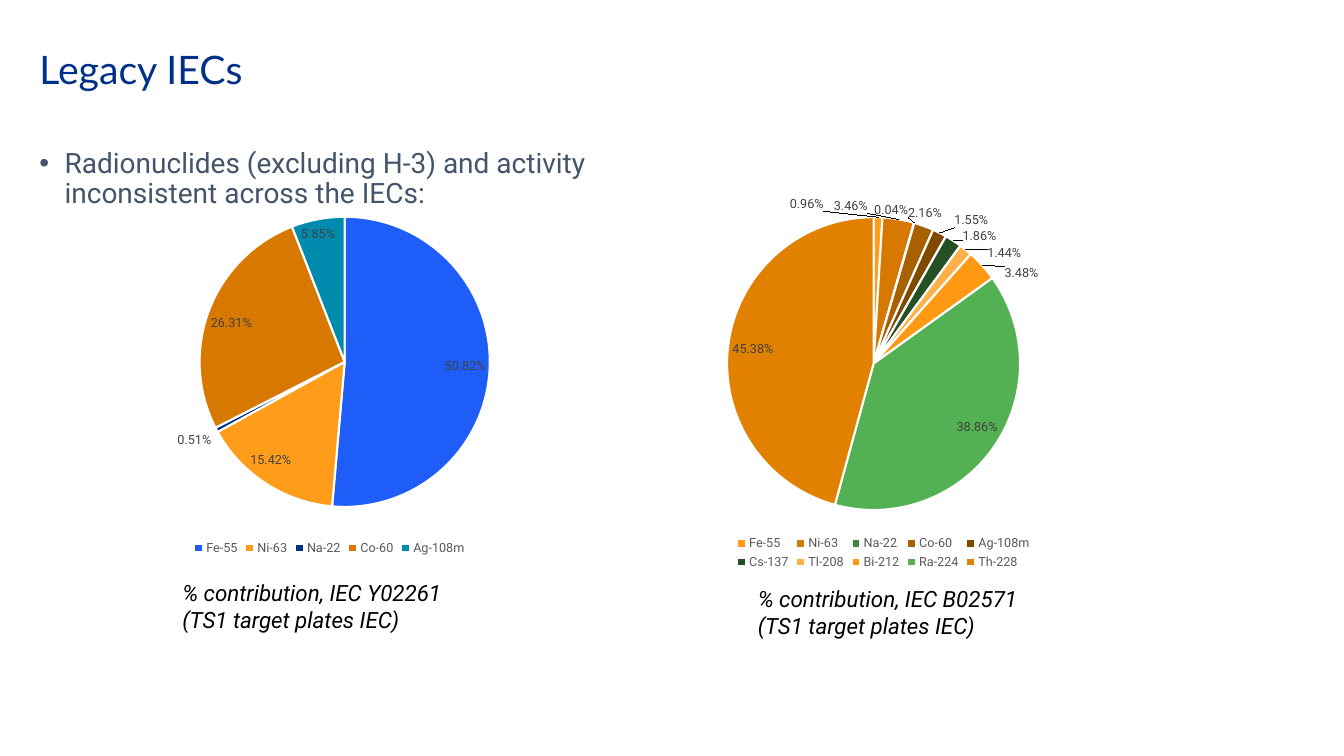
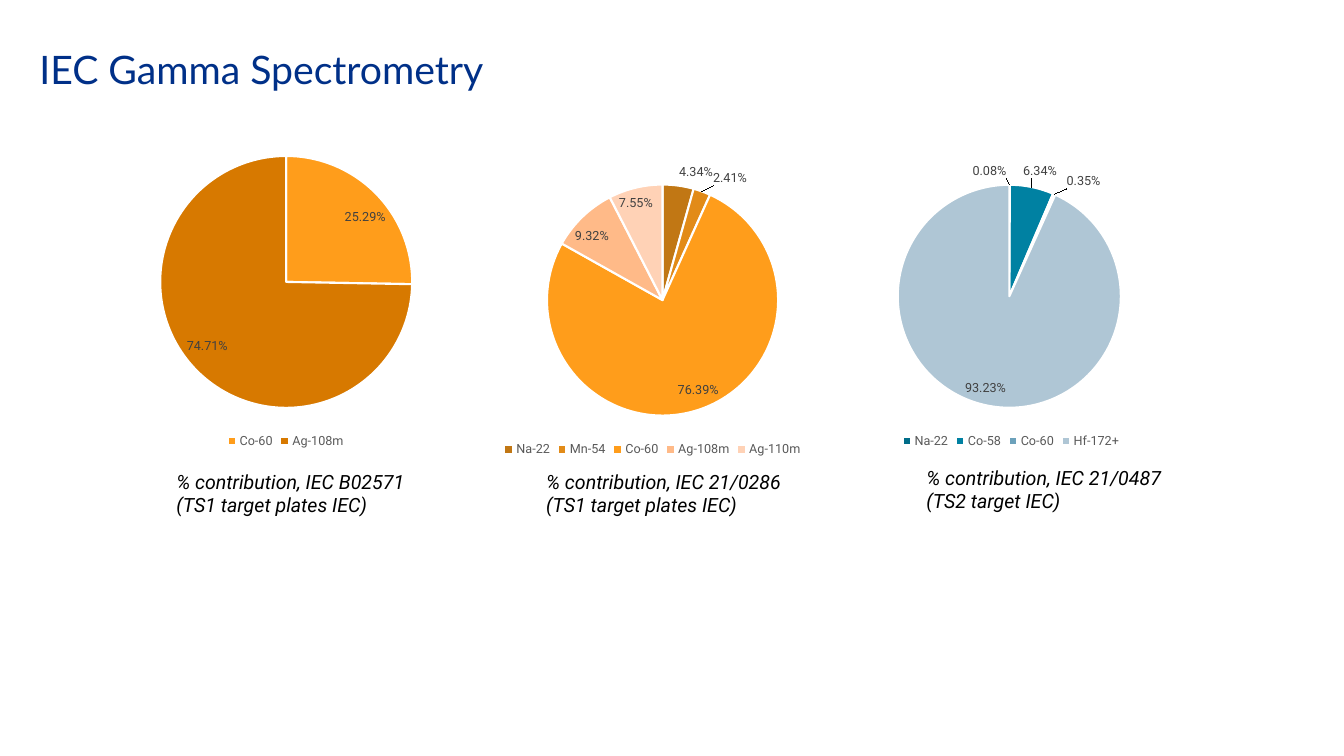
from dataclasses import dataclass, field
from typing import NamedTuple

from lxml import etree
from pptx import Presentation
from pptx import util as u
from pptx.chart.data import CategoryChartData
from pptx.dml.color import RGBColor
from pptx.enum import chart as ch
from pptx.enum import text as t
from pptx.oxml import ns

SLIDE_W, SLIDE_H = u.Inches(13.33), u.Inches(7.5)
NAVY = RGBColor(0x00, 0x30, 0x88)
SLATE = RGBColor(0x44, 0x54, 0x6A)
BLACK = RGBColor(0x00, 0x00, 0x00)
WHITE = RGBColor(0xFF, 0xFF, 0xFF)
LEGEND_GREY = RGBColor(0x59, 0x59, 0x59)
LABEL_GREY = RGBColor(0x40, 0x40, 0x40)
BLUE = RGBColor(0x1E, 0x5D, 0xF8)
ORANGE = RGBColor(0xFF, 0x9D, 0x1B)
OCHRE = RGBColor(0xD7, 0x79, 0x00)
TEAL = RGBColor(0x00, 0x8A, 0xAD)
PERCENT = "0.00%"


class Box(NamedTuple):
    """Left, top, width and height in percent of the slide."""
    left: float
    top: float
    width: float
    height: float

    def emu(self) -> tuple[int, int, int, int]:
        return (int(SLIDE_W * self.left / 100), int(SLIDE_H * self.top / 100),
                int(SLIDE_W * self.width / 100), int(SLIDE_H * self.height / 100))


class Disc(NamedTuple):
    """Centre in percent of the slide, diameter in percent of its width."""
    x: float
    y: float
    diameter: float


class Slice(NamedTuple):
    nuclide: str
    share: float
    color: RGBColor
    label_shift: tuple[float, float] | None = None


@dataclass
class Pie:
    frame: Box
    disc: Disc
    slices: list[Slice]
    caption: list[str]
    caption_box: Box
    caption_size: int


@dataclass
class Page:
    title: str
    pies: list[Pie]
    bullets: list[str] = field(default_factory=list)


TITLE_BOX = Box(2.18, 5.33, 47.85, 8.4)
BODY_BOX = Box(2.18, 19.07, 52.13, 63.47)
TS1 = "(TS1 target plates IEC)"

PAGES = [
    Page("Legacy IECs", [
        Pie(Box(0.9, 24.13, 47.25, 49.87), Disc(25.65, 47.87, 21.6), [
            Slice("Fe-55", 0.5082, BLUE),
            Slice("Ni-63", 0.1542, ORANGE),
            Slice("Na-22", 0.0051, NAVY),
            Slice("Co-60", 0.2631, OCHRE),
            Slice("Ag-108m", 0.0585, TEAL),
        ], ["% contribution, IEC Y02261", TS1], Box(12.83, 76, 21.83, 8.53), 16),
        Pie(Box(43.58, 24.13, 44.33, 51.73), Disc(65, 48.1, 21.8), [
            Slice("Fe-55", 0.0096, ORANGE, (-0.12, 0)),
            Slice("Ni-63", 0.0346, OCHRE, (-0.11, 0)),
            Slice("Na-22", 0.0004, RGBColor(0x3E, 0x86, 0x3E), (-0.07, 0)),
            Slice("Co-60", 0.0216, RGBColor(0xA9, 0x60, 0x00), (-0.03, 0)),
            Slice("Ag-108m", 0.0155, RGBColor(0x81, 0x49, 0x00), (0.02, 0)),
            Slice("Cs-137", 0.0186, RGBColor(0x25, 0x50, 0x25), (0.01, 0.02)),
            Slice("Tl-208", 0.0144, RGBColor(0xFF, 0xB1, 0x49), (0.03, 0.04)),
            Slice("Bi-212", 0.0348, RGBColor(0xFF, 0x98, 0x13), (0.03, 0.05)),
            Slice("Ra-224", 0.3886, RGBColor(0x53, 0xB0, 0x53)),
            Slice("Th-228", 0.4538, RGBColor(0xE2, 0x81, 0x00)),
        ], ["% contribution, IEC B02571", TS1], Box(55.65, 76.8, 23.48, 8.53), 16),
    ], ["Radionuclides (excluding H-3) and activity inconsistent across the IECs:"]),
    Page("IEC Gamma Spectrometry", [
        Pie(Box(31.8, 19.87, 33.53, 41.07), Disc(49.3, 39.7, 17.2), [
            Slice("Na-22", 0.0434, RGBColor(0xC1, 0x77, 0x14)),
            Slice("Mn-54", 0.0241, RGBColor(0xE2, 0x8B, 0x18), (0.02, 0)),
            Slice("Co-60", 0.7639, ORANGE),
            Slice("Ag-108m", 0.0932, RGBColor(0xFF, 0xBA, 0x88)),
            Slice("Ag-110m", 0.0755, RGBColor(0xFF, 0xD2, 0xB6)),
        ], ["% contribution, IEC 21/0286", TS1], Box(39.9, 61.47, 20.18, 7.6), 14),
        Pie(Box(2.18, 18.8, 38.18, 41.07), Disc(21.3, 37.3, 18.75), [
            Slice("Co-60", 0.2529, ORANGE),
            Slice("Ag-108m", 0.7471, OCHRE),
        ], ["% contribution, IEC B02571", TS1], Box(12.38, 61.47, 19.43, 7.6), 14),
        Pie(Box(56.48, 19.87, 37.5, 40), Disc(75.1, 39.2, 16.6), [
            Slice("Na-22", 0.0008, RGBColor(0x00, 0x6D, 0x89), (-0.04, 0)),
            Slice("Co-58", 0.0634, RGBColor(0x00, 0x81, 0xA2), (-0.02, -0.01)),
            Slice("Co-60", 0.0035, RGBColor(0x6C, 0xA1, 0xBB), (0.02, 0)),
            Slice("Hf-172+", 0.9323, RGBColor(0xAF, 0xC6, 0xD5)),
        ], ["% contribution, IEC 21/0487", "(TS2 target IEC)"],
            Box(68.18, 60.93, 20.18, 7.6), 14),
    ]),
]


def set_font(font, name: str, size: float, color: RGBColor, **extra) -> None:
    for key, value in {"name": name, "size": u.Pt(size), **extra}.items():
        setattr(font, key, value)
    font.color.rgb = color


def place(sp, box: Box) -> None:
    for key, value in zip(("left", "top", "width", "height"), box.emu()):
        setattr(sp, key, value)


def format_frame(tf, **values) -> None:
    for key, value in {"word_wrap": True, **values}.items():
        setattr(tf, key, value)


def add_title(s, title: str) -> None:
    sp = s.shapes.title
    place(sp, TITLE_BOX)
    format_frame(sp.text_frame, text=title, auto_size=t.MSO_AUTO_SIZE.NONE,
                 vertical_anchor=t.MSO_ANCHOR.MIDDLE)
    p = sp.text_frame.paragraphs[0]
    p.alignment, p.line_spacing = t.PP_ALIGN.LEFT, 0.9
    set_font(p.runs[0].font, "Lato", 28, NAVY)


def add_bullets(s, bullets: list[str]) -> None:
    sp = s.placeholders[1]
    place(sp, BODY_BOX)
    format_frame(sp.text_frame, text="\n".join(bullets),
                 auto_size=t.MSO_AUTO_SIZE.NONE, vertical_anchor=t.MSO_ANCHOR.TOP)
    for i, p in enumerate(sp.text_frame.paragraphs):
        p.line_spacing, p.space_before = 0.9, u.Pt(10 if i else 0)
        pPr = p._p.get_or_add_pPr()
        pPr.set("marL", str(u.Inches(0.25)))
        pPr.set("indent", str(-u.Inches(0.25)))
        etree.SubElement(pPr, ns.qn("a:buChar"), char="•")
        set_font(p.runs[0].font, "Roboto", 20, SLATE)


def add_caption(s, pie: Pie) -> None:
    sp = s.shapes.add_textbox(*pie.caption_box.emu())
    format_frame(sp.text_frame, text="\n".join(pie.caption),
                 auto_size=t.MSO_AUTO_SIZE.SHAPE_TO_FIT_TEXT)
    for p in sp.text_frame.paragraphs:
        set_font(p.runs[0].font, "Roboto", pie.caption_size, BLACK, italic=True)


def manual_layout(values: dict[str, str | float]):
    layout = etree.Element(ns.qn("c:layout"))
    manual = etree.SubElement(layout, ns.qn("c:manualLayout"))
    for tag, value in values.items():
        etree.SubElement(manual, ns.qn(f"c:{tag}"), val=str(value))
    return layout


def fix_plot(chart, pie: Pie) -> None:
    left, top, width, height = pie.frame.emu()
    d = SLIDE_W * pie.disc.diameter / 100
    x = (SLIDE_W * pie.disc.x / 100 - d / 2 - left) / width
    y = (SLIDE_H * pie.disc.y / 100 - d / 2 - top) / height
    area = chart._chartSpace.chart.plotArea
    for old in area.findall(ns.qn("c:layout")):
        area.remove(old)
    area.insert(0, manual_layout({
        "layoutTarget": "inner", "xMode": "edge", "yMode": "edge",
        "x": x, "y": y, "w": d / width, "h": d / height}))
    clear = etree.Element(ns.qn("c:spPr"))
    etree.SubElement(clear, ns.qn("a:noFill"))
    etree.SubElement(etree.SubElement(clear, ns.qn("a:ln")), ns.qn("a:noFill"))
    chart._chartSpace.chart.addnext(clear)


def shift_label(series, index: int, shift: tuple[float, float]) -> None:
    label = series.points[index].data_label
    set_font(label.font, "Roboto", 9, LABEL_GREY)
    label.position = ch.XL_LABEL_POSITION.BEST_FIT
    idx = series._element.xpath(f"c:dLbls/c:dLbl/c:idx[@val='{index}']")[0]
    layout = manual_layout(dict(zip("xy", shift)))
    idx.addnext(layout)
    layout.addnext(etree.Element(ns.qn("c:numFmt"), formatCode=PERCENT, sourceLinked="0"))


def add_pie(s, pie: Pie) -> None:
    data = CategoryChartData(number_format=PERCENT)
    data.categories = [part.nuclide for part in pie.slices]
    data.add_series("Series 1", [part.share for part in pie.slices])
    chart = s.shapes.add_chart(ch.XL_CHART_TYPE.PIE, *pie.frame.emu(), data).chart
    set_font(chart.font, "Roboto", 10, BLACK)
    chart.has_title, chart.has_legend = False, True
    chart.legend.position = ch.XL_LEGEND_POSITION.BOTTOM
    chart.legend.include_in_layout = False
    set_font(chart.legend.font, "Roboto", 9, LEGEND_GREY)
    chart.plots[0].vary_by_categories = True
    series = chart.plots[0].series[0]
    labels = series.data_labels
    for key, value in {"show_value": True, "number_format": PERCENT,
                       "number_format_is_linked": False,
                       "position": ch.XL_LABEL_POSITION.BEST_FIT}.items():
        setattr(labels, key, value)
    set_font(labels.font, "Roboto", 9, LABEL_GREY)
    for i, part in enumerate(pie.slices):
        fmt = series.points[i].format
        fmt.fill.solid()
        fmt.fill.fore_color.rgb = part.color
        fmt.line.color.rgb = WHITE
        fmt.line.width = u.Pt(1.5)
        if part.label_shift:
            shift_label(series, i, part.label_shift)
    fix_plot(chart, pie)


def main() -> None:
    prs = Presentation()
    prs.slide_width, prs.slide_height = SLIDE_W, SLIDE_H
    for page in PAGES:
        s = prs.slides.add_slide(prs.slide_layouts[1 if page.bullets else 5])
        add_title(s, page.title)
        if page.bullets:
            add_bullets(s, page.bullets)
        for pie in page.pies:
            add_pie(s, pie)
            add_caption(s, pie)
    prs.save("out.pptx")


if __name__ == "__main__":
    main()
